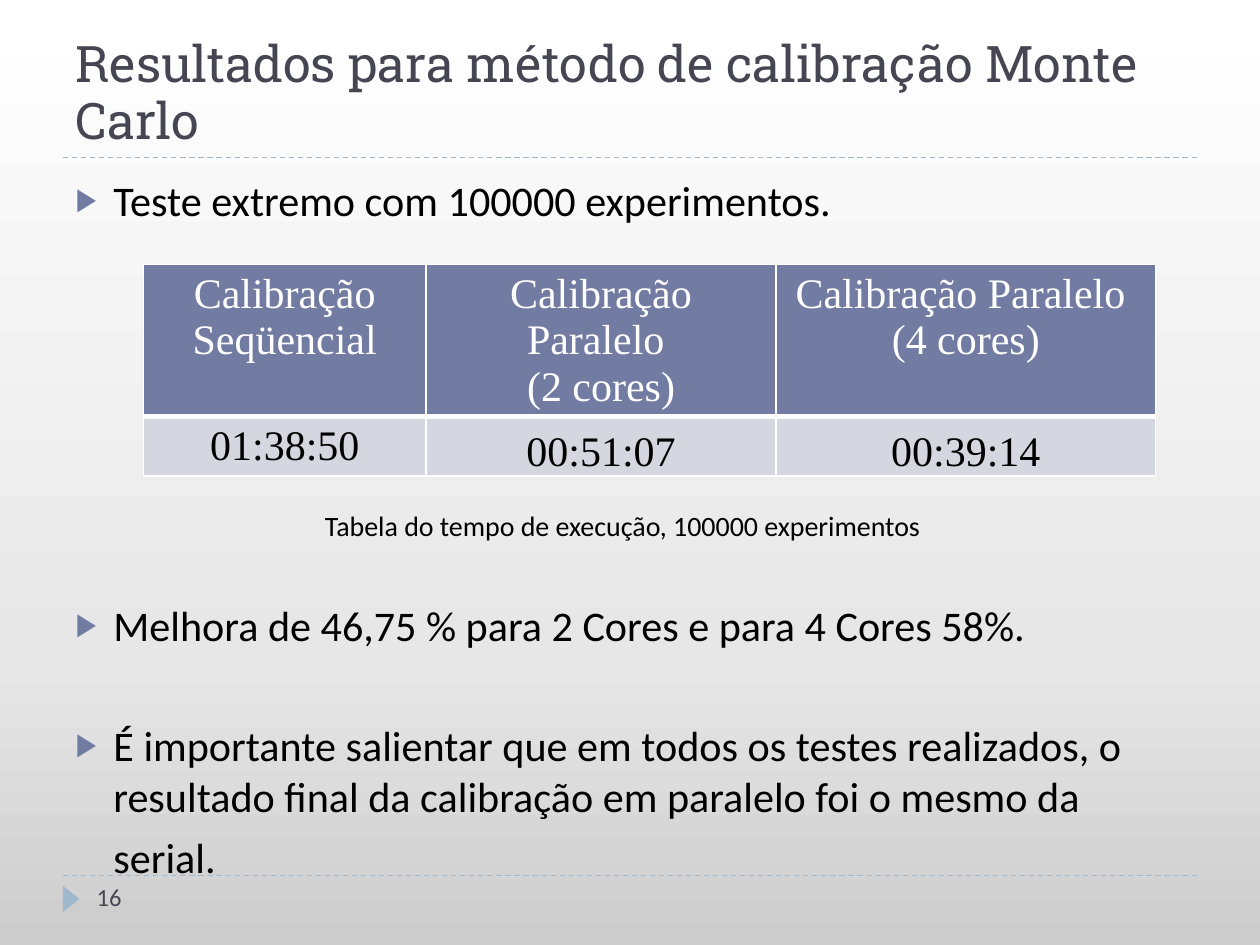
from lxml import etree
from pptx import Presentation
from pptx.dml.color import RGBColor
from pptx.enum.dml import MSO_LINE
from pptx.enum.shapes import MSO_CONNECTOR, MSO_SHAPE
from pptx.enum.text import MSO_ANCHOR, MSO_AUTO_SIZE, PP_ALIGN
from pptx.oxml.ns import qn
from pptx.util import Pt

STRAIGHT, TRIANGLE, DASH = MSO_CONNECTOR.STRAIGHT, MSO_SHAPE.ISOSCELES_TRIANGLE, MSO_LINE.DASH
LEFT, CENTER = PP_ALIGN.LEFT, PP_ALIGN.CENTER
TOP, BOTTOM = MSO_ANCHOR.TOP, MSO_ANCHOR.BOTTOM
NO_AUTOFIT = MSO_AUTO_SIZE.NONE

INK = RGBColor(0x46, 0x46, 0x53)
BLACK = RGBColor(0, 0, 0)
WHITE = RGBColor(0xFF, 0xFF, 0xFF)
INDIGO = RGBColor(0x72, 0x7C, 0xA3)
PALE_INDIGO = RGBColor(0xD5, 0xD7, 0xE0)
SKY = RGBColor(0x9F, 0xB8, 0xCD)
BACKGROUND_STOPS = [(0, RGBColor(0xCC, 0xCC, 0xCC)),
                    (30, RGBColor(0xE7, 0xE7, 0xE7)),
                    (100, WHITE)]

SANS, SLAB, SERIF = "Calibri", "Roboto Slab", "Times New Roman"
BULLET_INDENT = 21.6

# Text, space before in points, bulleted or not
FINDINGS = [
    ("Teste extremo com 100000 experimentos.", 6, True),
    ("Melhora de 46,75 % para 2 Cores e para 4 Cores 58%.", 214, True),
    ("É importante salientar que em todos os testes realizados, o resultado "
     "final da calibração em paralelo foi o mesmo da", 40, True),
    ("serial.", 6, False),
]
HEADINGS = ["Calibração Seqüencial",
            "Calibração Paralelo \n(2 cores)",
            "Calibração Paralelo \n(4 cores)"]
TIMES = ["01:38:50", "00:51:07", "00:39:14"]
COLUMN_WIDTHS = [161.3, 200.2, 216.7]
ROW_HEIGHTS = [86, 34]


def add_xml(parent, tag, **attributes):
    return etree.SubElement(parent, qn(tag), attributes)


def place(shape, left, top, width, height):
    shape.left, shape.top = Pt(left), Pt(top)
    shape.width, shape.height = Pt(width), Pt(height)


def style_runs(paragraph, font_name, size, color):
    for run in paragraph.runs:
        run.font.name = font_name
        run.font.size = Pt(size)
        run.font.color.rgb = color


def paint_background(slide):
    fill = slide.background.fill
    fill.gradient()
    fill.gradient_angle = 90
    stops = next(slide.element.iter(qn("a:gsLst")))
    for stop in list(stops):
        stops.remove(stop)
    for percent, color in BACKGROUND_STOPS:
        stop = add_xml(stops, "a:gs", pos=str(percent * 1000))
        add_xml(stop, "a:srgbClr", val=str(color))


def add_rule(slide, y):
    rule = slide.shapes.add_connector(STRAIGHT, Pt(36), Pt(y), Pt(684), Pt(y))
    rule.line.color.rgb = SKY
    rule.line.width = Pt(0.75)
    rule.line.dash_style = DASH
    add_xml(rule.element.spPr, "a:effectLst")


def add_page_marker(slide):
    marker = slide.shapes.add_shape(TRIANGLE, Pt(33.1), Pt(509), Pt(15.1), Pt(9.4))
    marker.rotation = 90
    marker.shadow.inherit = False
    marker.fill.solid()
    marker.fill.fore_color.rgb = SKY
    marker.line.fill.background()


def add_label(slide, text, box, size, color):
    label = slide.shapes.add_textbox(*map(Pt, box))
    label.text_frame.word_wrap = True
    label.text_frame.text = text
    style_runs(label.text_frame.paragraphs[0], SANS, size, color)


def fill_title(slide):
    title = slide.shapes.title
    place(title, 36, 12.2, 648, 77.8)
    frame = title.text_frame
    frame.text = "Resultados para método de calibração Monte Carlo"
    frame.auto_size = NO_AUTOFIT
    frame.vertical_anchor = BOTTOM
    heading = frame.paragraphs[0]
    heading.alignment = LEFT
    heading.line_spacing = 0.95
    style_runs(heading, SLAB, 28.8, INK)


def set_bullet(paragraph, bulleted):
    properties = paragraph._p.get_or_add_pPr()
    properties.set("marL", str(Pt(BULLET_INDENT)))
    properties.set("indent", str(Pt(-BULLET_INDENT if bulleted else 0)))
    if not bulleted:
        add_xml(properties, "a:buNone")
        return
    color = add_xml(properties, "a:buClr")
    add_xml(color, "a:srgbClr", val=str(INDIGO))
    add_xml(properties, "a:buSzPct", val="76000")
    add_xml(properties, "a:buFont", typeface=SANS)
    add_xml(properties, "a:buChar", char="▶")


def fill_findings(slide):
    body = slide.placeholders[1]
    place(body, 36, 95.8, 648, 388.8)
    frame = body.text_frame
    frame.text = "\n".join(text for text, _, _ in FINDINGS)
    frame.auto_size = NO_AUTOFIT
    frame.vertical_anchor = TOP
    for paragraph, (_, gap, bulleted) in zip(frame.paragraphs, FINDINGS):
        paragraph.space_before = Pt(gap)
        set_bullet(paragraph, bulleted)
        style_runs(paragraph, SANS, 24.1, BLACK)


def set_borders(cell, top, bottom):
    properties = cell._tc.get_or_add_tcPr()
    widths = {"a:lnL": 1, "a:lnR": 1, "a:lnT": top, "a:lnB": bottom}
    for position, (tag, width) in enumerate(widths.items()):
        border = add_xml(properties, tag, w=str(Pt(width)))
        add_xml(add_xml(border, "a:solidFill"), "a:srgbClr", val=str(WHITE))
        properties.insert(position, border)


def fill_cell(cell, text, text_color, fill_color):
    cell.text = text
    cell.fill.solid()
    cell.fill.fore_color.rgb = fill_color
    for paragraph in cell.text_frame.paragraphs:
        paragraph.alignment = CENTER
        style_runs(paragraph, SERIF, 24, text_color)


def add_times_table(slide):
    times = slide.shapes.add_table(
        2, 3, Pt(82.1), Pt(151.2), Pt(sum(COLUMN_WIDTHS)), Pt(sum(ROW_HEIGHTS))).table
    for row, height in zip(times.rows, ROW_HEIGHTS):
        row.height = Pt(height)
    for index, width in enumerate(COLUMN_WIDTHS):
        times.columns[index].width = Pt(width)
        heading, value = times.cell(0, index), times.cell(1, index)
        fill_cell(heading, HEADINGS[index], WHITE, INDIGO)
        fill_cell(value, TIMES[index], BLACK, PALE_INDIGO)
        set_borders(heading, top=1, bottom=3)
        set_borders(value, top=3, bottom=1)
        # Parallel times sit on the bottom edge of their cells
        if index > 0:
            value.vertical_anchor = BOTTOM
            value.margin_left = value.margin_right = value.margin_top = Pt(0.72)
            value.margin_bottom = Pt(0)


def main():
    deck = Presentation()
    deck.slide_width, deck.slide_height = Pt(720), Pt(540)
    slide = deck.slides.add_slide(deck.slide_layouts[1])

    # Backdrop
    paint_background(slide)
    for y in (500.4, 90):
        add_rule(slide, y)
    add_page_marker(slide)

    # Content
    fill_title(slide)
    fill_findings(slide)
    add_times_table(slide)
    add_label(slide, "Tabela do tempo de execução, 100000 experimentos",
              (178.6, 287.3, 362.9, 26.6), 16, BLACK)

    # Page number
    add_label(slide, "16", (48.2, 500.4, 156.2, 28.8), 14, INK)

    deck.save("out.pptx")


if __name__ == "__main__":
    main()
